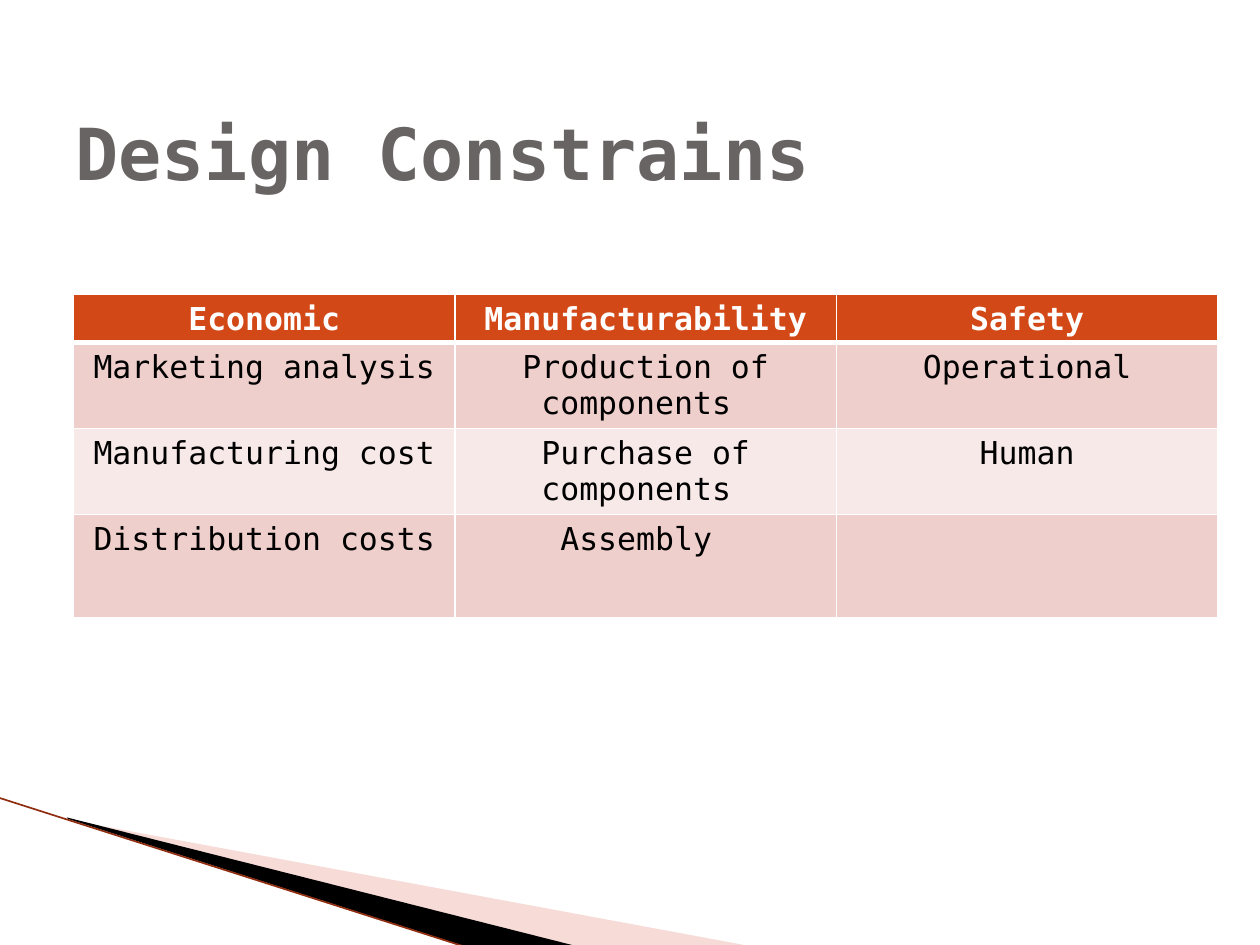
"""Build the design constraints slide with its table and corner wedges."""
import lxml.etree
import pptx
import pptx.dml.color
import pptx.enum.shapes
import pptx.enum.text
import pptx.oxml
import pptx.oxml.ns
import pptx.util

Cm = pptx.util.Cm
Pt = pptx.util.Pt
RGBColor = pptx.dml.color.RGBColor
qn = pptx.oxml.ns.qn

WHITE = RGBColor(0xFF, 0xFF, 0xFF)
BLACK = RGBColor(0x00, 0x00, 0x00)
GRAY = RGBColor(0x69, 0x64, 0x64)
ORANGE = RGBColor(0xD3, 0x48, 0x17)
ROSE = RGBColor(0xEF, 0xCF, 0xCC)
PALE_ROSE = RGBColor(0xF7, 0xE9, 0xE8)
WEDGE_PINK = RGBColor(0xE9, 0xA5, 0x9D)
DARK_RED = RGBColor(0x8F, 0x2D, 0x10)

FONT = "DejaVu Sans Mono"
TITLE_FORMAT = {"name": FONT, "size": Pt(41), "bold": True}
HEADER_FORMAT = {"name": FONT, "size": Pt(18), "bold": True}
BODY_FORMAT = {"name": FONT, "size": Pt(18), "bold": False}

PINK_WEDGE = [(1.4, 16.53), (15.11, 19.07), (11.58, 19.07), (1.4, 16.51)]
PINK_FRAME = (1.98, 13.89, 10.57, 4.01)
BLACK_WEDGE = [(1.35, 16.48), (11.61, 19.07), (9.45, 19.1), (1.37, 16.51)]
BLACK_FRAME = (-0.15, 16.08, 10.57, 2.34)

ROWS = [
    ("Economic", "Manufacturability", "Safety"),
    ("Marketing analysis", "Production of components ", "Operational"),
    ("Manufacturing cost", "Purchase of components ", "Human"),
    ("Distribution costs", "Assembly ", ""),
]
ROW_HEIGHTS = [0.89, 1.47, 1.47, 2.07]
ROW_FILLS = [ORANGE, ROSE, PALE_ROSE, ROSE]
COLUMN_WIDTH = 7.69


def write_text(para, text, formats, color):
    """Add one formatted span to a paragraph."""
    span = para.add_run()
    span.text = text
    for name, value in formats.items():
        setattr(span.font, name, value)
    span.font.color.rgb = color


def set_frame(wedge, frame):
    """Give a wedge a new frame while its outline stays in place."""
    left, top, width, height = [Cm(value) for value in frame]
    shift_x, shift_y = wedge.left - left, wedge.top - top
    outline = wedge._element.spPr.find(".//" + qn("a:path"))
    outline.set("w", str(width))
    outline.set("h", str(height))
    for point in outline.iter(qn("a:pt")):
        point.set("x", str(int(point.get("x")) + shift_x))
        point.set("y", str(int(point.get("y")) + shift_y))
    wedge.left, wedge.top, wedge.width, wedge.height = left, top, width, height


def add_wedge(page, points, frame, color, opacity=100):
    """Draw a filled outline through points given in centimetres."""
    corners = [(Cm(x), Cm(y)) for x, y in points]
    builder = page.shapes.build_freeform(*corners[0])
    builder.add_line_segments(corners[1:], close=True)
    wedge = builder.convert_to_shape()
    set_frame(wedge, frame)
    wedge.shadow.inherit = False
    wedge.fill.solid()
    wedge.fill.fore_color.rgb = color
    wedge.line.fill.background()
    if opacity < 100:
        tint = wedge._element.spPr.find(".//" + qn("a:srgbClr"))
        lxml.etree.SubElement(tint, qn("a:alpha"), val=str(opacity * 1000))


def add_edge(page, start, end, color, width):
    """Draw a straight line between two points in centimetres."""
    ends = [Cm(value) for value in (*start, *end)]
    edge = page.shapes.add_connector(pptx.enum.shapes.MSO_CONNECTOR.STRAIGHT, *ends)
    edge.line.color.rgb = color
    edge.line.width = Pt(width)
    lxml.etree.SubElement(edge._element.spPr, qn("a:effectLst"))


def add_title(page, text):
    """Place the slide title in a vertically centred box."""
    box = page.shapes.add_textbox(Cm(1.27), Cm(1.47), Cm(22.86), Cm(3.18))
    frame = box.text_frame
    frame.word_wrap = True
    frame.vertical_anchor = pptx.enum.text.MSO_ANCHOR.MIDDLE
    write_text(frame.paragraphs[0], text, TITLE_FORMAT, GRAY)


def set_borders(cell, widths):
    """Give a cell white borders, with widths in points by side tag."""
    properties = cell._tc.get_or_add_tcPr()
    for index, (side, width) in enumerate(widths.items()):
        border = pptx.oxml.parse_xml(
            f'<a:{side} {pptx.oxml.ns.nsdecls("a")} w="{Pt(width)}">'
            f'<a:solidFill><a:srgbClr val="{WHITE}"/></a:solidFill></a:{side}>'
        )
        properties.insert(index, border)


def add_constraints_table(page):
    """Build the table of constraints with a header and shaded rows."""
    columns = len(ROWS[0])
    frame = page.shapes.add_table(
        len(ROWS), columns, Cm(1.48), Cm(5.94),
        Cm(COLUMN_WIDTH * columns), Cm(sum(ROW_HEIGHTS)),
    )
    table = frame.table
    for column in table.columns:
        column.width = Cm(COLUMN_WIDTH)
    for index, texts in enumerate(ROWS):
        table.rows[index].height = Cm(ROW_HEIGHTS[index])
        formats, color = (BODY_FORMAT, BLACK) if index else (HEADER_FORMAT, WHITE)
        widths = {"lnL": 1, "lnR": 1, "lnT": 3 if index == 1 else 1,
                  "lnB": 1 if index else 3}
        for cell, text in zip(table.rows[index].cells, texts):
            cell.margin_bottom = Cm(0.08)
            cell.fill.solid()
            cell.fill.fore_color.rgb = ROW_FILLS[index]
            set_borders(cell, widths)
            if text:
                para = cell.text_frame.paragraphs[0]
                para.alignment = pptx.enum.text.PP_ALIGN.CENTER
                write_text(para, text, formats, color)


def main():
    """Create the deck and save it."""
    deck = pptx.Presentation()
    deck.slide_width, deck.slide_height = Cm(25.4), Cm(19.05)
    page = deck.slides.add_slide(deck.slide_layouts[6])
    add_wedge(page, PINK_WEDGE, PINK_FRAME, WEDGE_PINK, opacity=40)
    add_wedge(page, BLACK_WEDGE, BLACK_FRAME, BLACK)
    add_edge(page, (-0.03, 16.08), (9.42, 19.1), DARK_RED, 0.95)
    add_title(page, "Design Constrains")
    add_constraints_table(page)
    deck.save("out.pptx")


if __name__ == "__main__":
    main()
